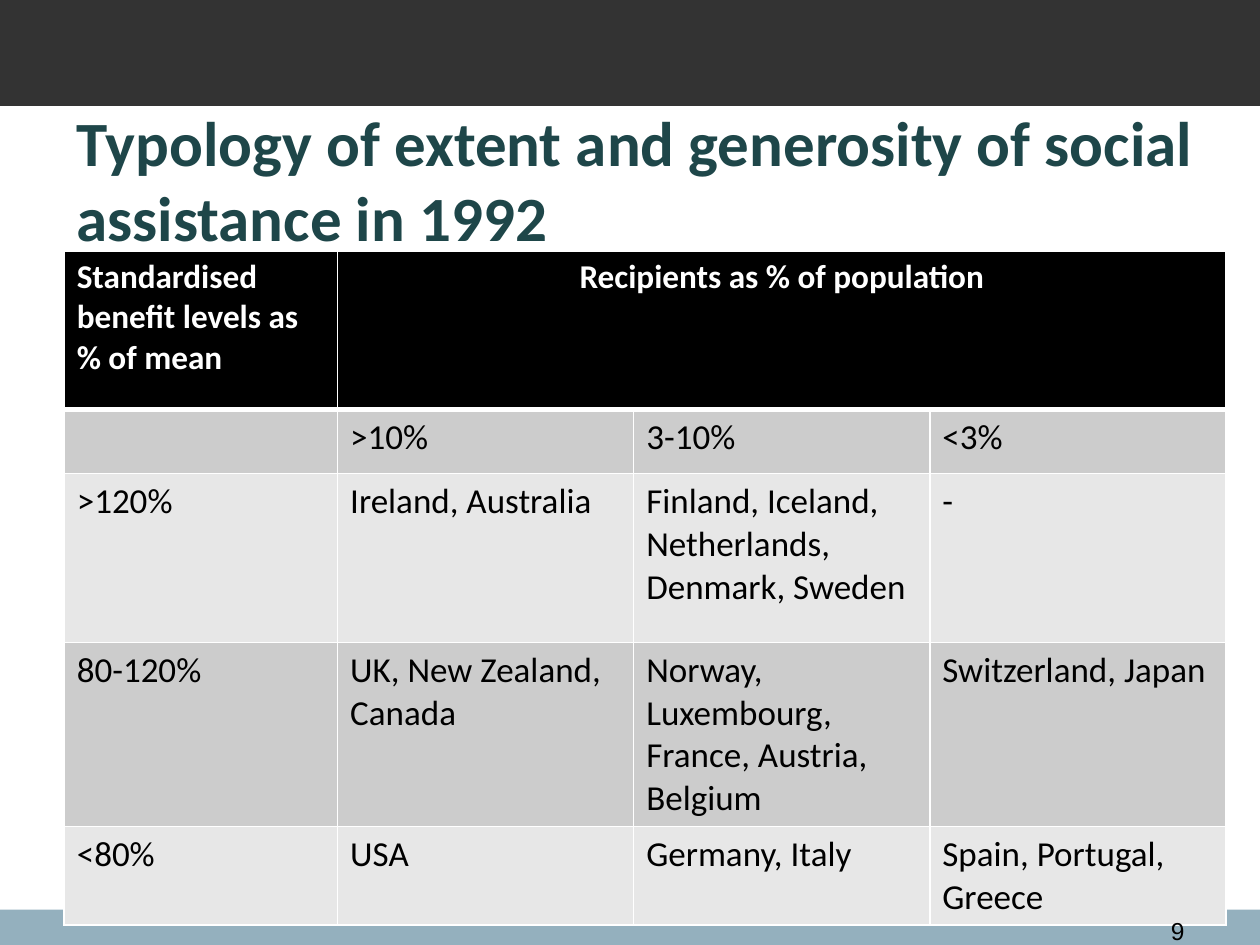
from lxml.etree import SubElement
from pptx import Presentation
from pptx.dml.color import RGBColor as Rgb
from pptx.enum.shapes import MSO_SHAPE as Shape
from pptx.enum.text import MSO_ANCHOR as Anchor, PP_ALIGN as Align
from pptx.oxml import parse_xml
from pptx.oxml.ns import nsdecls, qn
from pptx.util import Inches, Pt

COLORS = {
    "top_band": "333333", "bottom_band": "94B0BE", "title": "1E4649",
    "header": "000000", "dark_row": "CCCCCC", "light_row": "E7E7E7",
    "white": "FFFFFF", "text": "000000",
}
FORMATS = {
    "title": {"name": "Calibri", "size": Pt(36), "bold": True, "color": "title"},
    "header": {"name": "Calibri", "size": Pt(19), "bold": True, "color": "white"},
    "body": {"name": "Calibri", "size": Pt(20), "bold": False, "color": "text"},
    "number": {"name": "Arial", "size": Pt(14), "bold": False, "color": "text"},
}
COLUMN_WIDTHS = [2.17, 2.35, 2.35, 2.35]
ROW_HEIGHTS = [1.26, 0.51, 1.34, 1.46, 0.78]
ROWS = [
    ["Standardised benefit levels as % of mean", "Recipients as % of population", "", ""],
    ["", ">10%", "3-10%", "<3%"],
    [">120%", "Ireland, Australia", "Finland, Iceland, Netherlands, Denmark, Sweden", "-"],
    ["80-120%", "UK, New Zealand, Canada",
     "Norway, Luxembourg, France, Austria, Belgium", "Switzerland, Japan"],
    ["<80%", "USA", "Germany, Italy", "Spain, Portugal, Greece"],
]


class SlideBuilder:
    def __init__(self, slide):
        self.slide = slide

    def color(self, name):
        return Rgb.from_string(COLORS[name])

    def fill_text(self, frame, text, style, align=Align.LEFT):
        para = frame.paragraphs[0]
        para.alignment = align
        if text:
            para.add_run().text = text
        for font in [para.font] + [span.font for span in para.runs]:
            for key, value in FORMATS[style].items():
                if key == "color":
                    font.color.rgb = self.color(value)
                else:
                    setattr(font, key, value)

    def band(self, top, height, fill):
        band = self.slide.shapes.add_shape(
            Shape.RECTANGLE, 0, Inches(top), Inches(10), Inches(height))
        band.shadow.inherit = False
        band.fill.solid()
        band.fill.fore_color.rgb = self.color(fill)
        band.line.fill.background()

    def text(self, bounds, text, style, align=Align.LEFT, anchor=Anchor.TOP):
        box = self.slide.shapes.add_textbox(*map(Inches, bounds))
        box.text_frame.word_wrap = True
        box.text_frame.vertical_anchor = anchor
        self.fill_text(box.text_frame, text, style, align)

    def borders(self, cell, widths):
        """Draw white cell borders; widths are points for left, right, top, bottom."""
        properties = cell._tc.get_or_add_tcPr()
        for index, (side, width) in enumerate(zip("LRTB", widths)):
            line = parse_xml(f'<a:ln{side} {nsdecls("a")} w="{Pt(width)}"/>')
            fill = SubElement(line, qn("a:solidFill"))
            SubElement(fill, qn("a:srgbClr"), val=COLORS["white"])
            properties.insert(index, line)

    def table(self, left, top, rows, widths, heights):
        table = self.slide.shapes.add_table(
            len(rows), len(widths), Inches(left), Inches(top),
            Inches(sum(widths)), Inches(sum(heights))).table
        for column, width in zip(table.columns, widths):
            column.width = Inches(width)
        for row, height in zip(table.rows, heights):
            row.height = Inches(height)
        table.cell(0, 1).merge(table.cell(0, len(widths) - 1))
        for r, values in enumerate(rows):
            style = "body" if r else "header"
            fill = ("dark_row" if r % 2 else "light_row") if r else "header"
            for c, value in enumerate(values):
                cell = table.cell(r, c)
                cell.fill.solid()
                cell.fill.fore_color.rgb = self.color(fill)
                self.borders(cell, (1, 1, 3 if r == 1 else 1, 1 if r else 3))
                align = Align.CENTER if r == 0 and c == 1 else Align.LEFT
                self.fill_text(cell.text_frame, value, style, align)


def main():
    deck = Presentation()
    deck.slide_width, deck.slide_height = Inches(10), Inches(7.5)
    page = SlideBuilder(deck.slides.add_slide(deck.slide_layouts[6]))
    page.band(7.22, 0.28, "bottom_band")
    page.band(0, 0.84, "top_band")
    page.text((0.51, 0.84, 9.21, 1.16),
              "Typology of extent and generosity of social assistance in 1992",
              "title", anchor=Anchor.MIDDLE)
    page.table(0.51, 1.99, ROWS, COLUMN_WIDTHS, ROW_HEIGHTS)
    page.text((8.86, 7.22, 0.64, 0.24), "9", "number", Align.RIGHT)
    deck.save("out.pptx")


if __name__ == "__main__":
    main()
